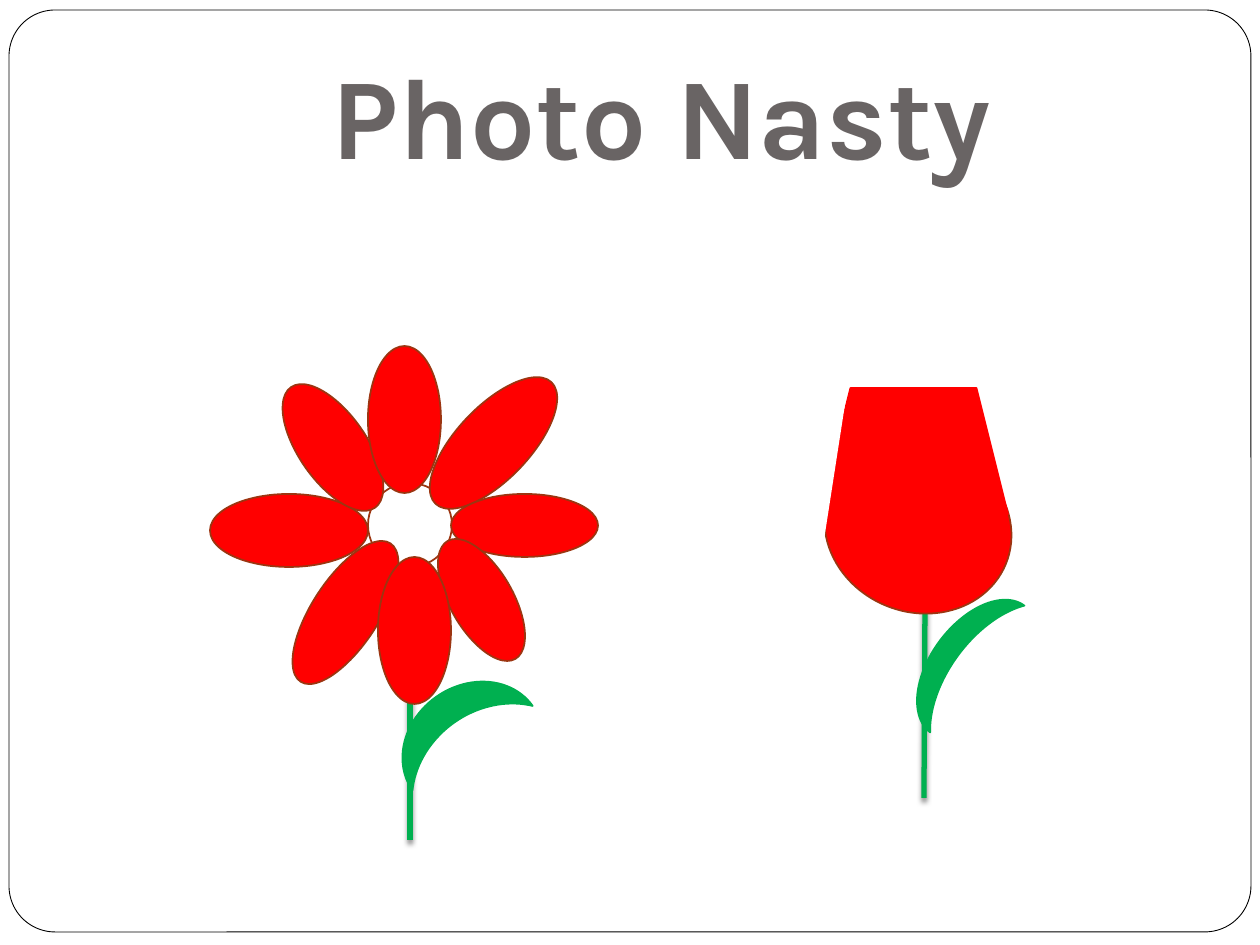
"""Build the Photo Nasty slide with a daisy and a tulip."""
from dataclasses import dataclass

from lxml.etree import SubElement
from pptx import Presentation
from pptx.dml.color import RGBColor
from pptx.enum.shapes import MSO_CONNECTOR, MSO_SHAPE
from pptx.enum.text import MSO_ANCHOR, PP_ALIGN
from pptx.oxml.ns import qn
from pptx.util import Emu, Pt


@dataclass(frozen=True)
class Theme:
    white: str = "FFFFFF"
    black: str = "000000"
    red: str = "FF0000"
    green: str = "00B050"
    outline: str = "9C3511"
    title: str = "696464"
    font: str = "Karla"
    title_size: int = 66


theme = Theme()


def px(length):
    return Emu(round(length * 914400 / 126))


def add_part(kind, place, fill, line, angle=0, line_width=1):
    part = page.shapes.add_shape(kind, *map(px, place))
    part.shadow.inherit = False
    part.rotation = angle
    part.fill.solid()
    part.fill.fore_color.rgb = RGBColor.from_string(fill)
    part.line.color.rgb = RGBColor.from_string(line)
    part.line.width = Pt(line_width)
    return part


deck = Presentation()
deck.slide_width, deck.slide_height = px(1260), px(945)
page = deck.slides.add_slide(deck.slide_layouts[6])

frame = add_part(MSO_SHAPE.ROUNDED_RECTANGLE, (9, 10, 1242, 922), theme.white, theme.black, line_width=0.5)
frame.adjustments[0] = 0.05

title_box = page.shapes.add_textbox(px(126), px(38), px(1071), px(158))
title_frame = title_box.text_frame
title_frame.word_wrap = True
title_frame.vertical_anchor = MSO_ANCHOR.BOTTOM
title_frame.margin_bottom = px(13)
title_frame.text = "Photo Nasty"
para = title_frame.paragraphs[0]
para.alignment = PP_ALIGN.CENTER
span = para.runs[0]
span.font.name = theme.font
span.font.size = Pt(theme.title_size)
span.font.bold = True
span.font.color.rgb = RGBColor.from_string(theme.title)

stems = [(410, 567, 410, 840), (925, 609, 924, 798)]
for ends in stems:
    stem = page.shapes.add_connector(MSO_CONNECTOR.STRAIGHT, *map(px, ends))
    stem.line.color.rgb = RGBColor.from_string(theme.green)
    stem.line.width = Pt(3)
    effects = SubElement(stem._element.spPr, qn("a:effectLst"))
    shadow = SubElement(
        effects, qn("a:outerShdw"), blurRad=str(Pt(3)), dist=str(Pt(2)), dir="5400000", rotWithShape="0"
    )
    shade = SubElement(shadow, qn("a:srgbClr"), val=theme.black)
    SubElement(shade, qn("a:alpha"), val="50000")

add_part(MSO_SHAPE.OVAL, (368, 483, 84, 84), theme.white, theme.outline)
petals = [
    ((312, 530, 67, 165), 33),
    ((210, 494, 158, 73), 0),
    ((299, 374, 68, 147), 325.2),
    ((368, 346, 73, 147), 0),
    ((457, 359, 73, 168), 43.6),
    ((451, 494, 147, 63), 0),
    ((450, 532, 63, 136), 330.1),
    ((378, 557, 73, 147), 0),
]
for place, angle in petals:
    add_part(MSO_SHAPE.OVAL, place, theme.red, theme.outline, angle)

add_part(MSO_SHAPE.CHORD, (834, 433, 168, 190), theme.red, theme.outline, 292.1)
add_part(MSO_SHAPE.TRAPEZOID, (819, 388, 189, 126), theme.red, theme.red)
add_part(MSO_SHAPE.RECTANGLE, (774, 364, 63, 169), theme.white, theme.white, 8.8)

leaves = [((935, 576, 47, 158), 36.6), ((423, 649, 63, 147), 54.9)]
for place, angle in leaves:
    add_part(MSO_SHAPE.MOON, place, theme.green, theme.green, angle)

deck.save("out.pptx")
